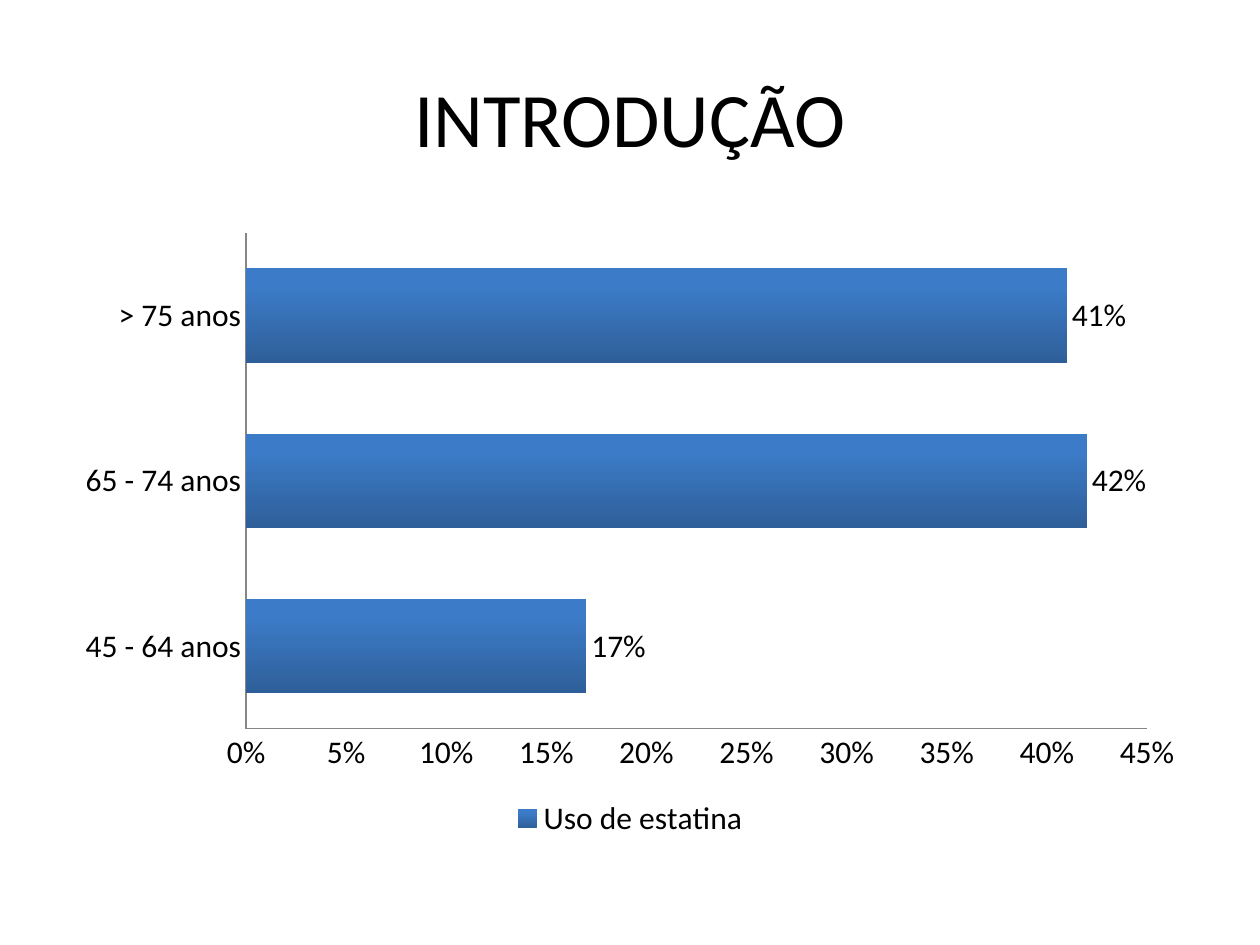
from dataclasses import dataclass

from pptx import Presentation
from pptx.chart.data import CategoryChartData
from pptx.dml.color import RGBColor
from pptx.enum.chart import XL_CHART_TYPE, XL_LABEL_POSITION, XL_LEGEND_POSITION, XL_TICK_MARK
from pptx.enum.text import MSO_ANCHOR, PP_ALIGN
from pptx.util import Inches, Pt


@dataclass(frozen=True)
class Theme:
    """Colours, font and type sizes of the slide."""
    face: str = "Calibri"
    ink: RGBColor = RGBColor(0, 0, 0)
    axis: RGBColor = RGBColor(0x86, 0x86, 0x86)
    dark: RGBColor = RGBColor(0x2E, 0x5F, 0x99)
    light: RGBColor = RGBColor(0x3C, 0x7B, 0xC7)
    head: int = 44
    body: int = 18


THEME = Theme()
WIDE, HIGH = Inches(10), Inches(7.5)
USAGE = {"45 - 64 anos": 0.17, "65 - 74 anos": 0.42, "> 75 anos": 0.41}


def apply(item, values):
    """Set each named attribute of an item."""
    for name, value in values.items():
        setattr(item, name, value)


def area(left, top, width, height):
    """Turn shares of the slide into lengths."""
    return int(left * WIDE), int(top * HIGH), int(width * WIDE), int(height * HIGH)


def style(font, size):
    """Give a font the theme's face and ink."""
    apply(font, {"name": THEME.face, "size": Pt(size), "bold": False})
    font.color.rgb = THEME.ink


def add_title(slide, text, box):
    """Add the centred heading."""
    frame = slide.shapes.add_textbox(*box).text_frame
    apply(frame, {"word_wrap": True, "vertical_anchor": MSO_ANCHOR.MIDDLE})
    para = frame.paragraphs[0]
    apply(para, {"text": text, "alignment": PP_ALIGN.CENTER})
    style(para.runs[0].font, THEME.head)


def set_axis(axis):
    """Draw an axis as a plain grey line."""
    apply(axis, {"has_major_gridlines": False, "major_tick_mark": XL_TICK_MARK.NONE,
                 "minor_tick_mark": XL_TICK_MARK.NONE})
    apply(axis.format.line, {"width": Pt(0.75)})
    axis.format.line.color.rgb = THEME.axis


def shade(fill):
    """Fill with a gradient that lightens upwards."""
    fill.gradient()
    fill.gradient_angle = 90
    for stop, color, place in zip(fill.gradient_stops, (THEME.dark, THEME.light), (0, 0.8)):
        stop.color.rgb = color
        stop.position = place


def add_bars(slide, name, values, box):
    """Add the horizontal bar chart of percentages."""
    data = CategoryChartData(number_format="0%")
    data.categories = list(values)
    data.add_series(name, list(values.values()))
    chart = slide.shapes.add_chart(XL_CHART_TYPE.BAR_CLUSTERED, *box, data).chart
    apply(chart, {"has_title": False, "has_legend": True})
    style(chart.font, THEME.body)
    apply(chart.legend, {"position": XL_LEGEND_POSITION.BOTTOM, "include_in_layout": False})
    for axis in (chart.category_axis, chart.value_axis):
        set_axis(axis)
    apply(chart.value_axis, {"minimum_scale": 0, "maximum_scale": 0.45, "major_unit": 0.05})
    apply(chart.value_axis.tick_labels, {"number_format": "0%", "number_format_is_linked": False})
    plot = chart.plots[0]
    apply(plot, {"gap_width": 75, "vary_by_categories": False, "has_data_labels": True})
    apply(plot.data_labels, {"show_value": True, "number_format": "0%",
                             "number_format_is_linked": False,
                             "position": XL_LABEL_POSITION.OUTSIDE_END})
    style(plot.data_labels.font, THEME.body)
    shade(plot.series[0].format.fill)


def main():
    """Build and save the slide."""
    deck = Presentation()
    apply(deck, {"slide_width": WIDE, "slide_height": HIGH})
    slide = deck.slides.add_slide(deck.slide_layouts[6])
    add_title(slide, "INTRODUÇÃO", area(0.05, 0.04, 0.9, 1 / 6))
    add_bars(slide, "Uso de estatina", USAGE, area(0.05, 7 / 30, 0.9, 0.66))
    deck.save("out.pptx")


if __name__ == "__main__":
    main()
